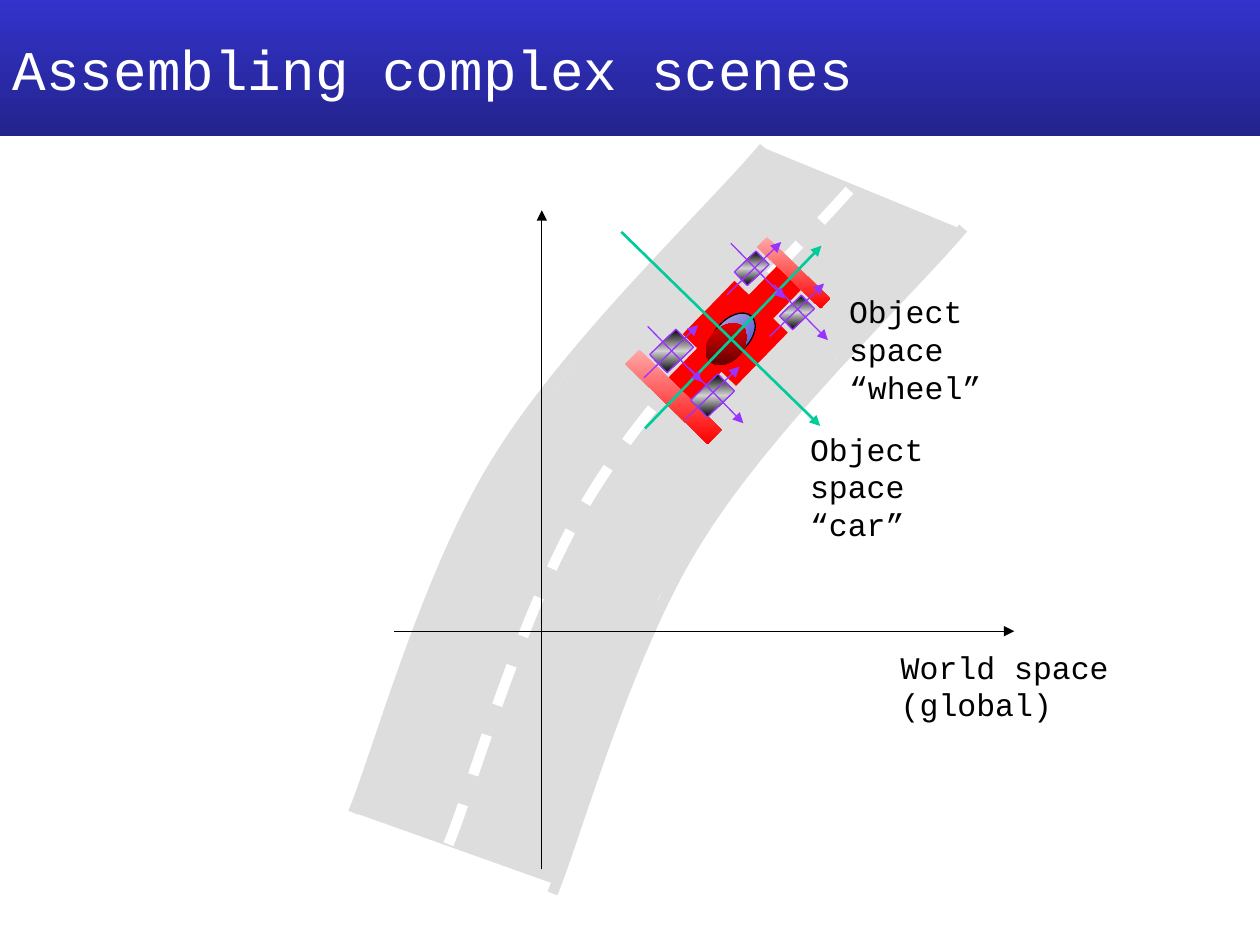
from lxml import etree
from pptx import Presentation
from pptx import util as u
from pptx.dml.color import RGBColor
from pptx.enum import dml, shapes, text
from pptx.oxml import ns

Pt = u.Pt
FONT = "Courier New"
CAR_ANGLE = 224.2
WHEEL_ANGLE = 46
COLORS = {
    "white": "FFFFFF", "black": "000000", "road": "DDDDDD",
    "bar_top": "3333CC", "bar_bottom": "23238C",
    "red": "FF0000", "pink": "FFA9A9", "maroon": "4D0000",
    "glass": "CACAEB", "blue": "3333CC", "shine": "D1D1D1",
    "car_axis": "00CC99", "wheel_axis": "9933FF",
}
ROAD = [(315.4, 504.7), (376.6, 341.3), (417.6, 276.5), (477.4, 204.5),
        (551.5, 131.8), (435.6, 84.2), (345.6, 186.5), (283, 264.2),
        (244.8, 342.7), (215.3, 426.2), (202.3, 464.4)]
CENTER_LINE = [(256.3, 482.4), (270, 449.3), (298.8, 344.9), (338.4, 281.5),
               (379.4, 214.6), (459.4, 139.7), (491, 102.2)]
WHEELS = [
    ((376.6, 190.1, 14.4, 20.9), (370.1, 186.5)),
    ((424.1, 144.7, 10.8, 17.3), (417.6, 139)),
    ((450, 169.9, 10.8, 17.3), (442.1, 162.7)),
    ((400.3, 215.3, 13.7, 21.6), (393.8, 210.2)),
]


def rgb(name):
    return RGBColor.from_string(COLORS[name])


def paint(shape, names, angle=90):
    if len(names) == 1:
        shape.fill.solid()
        shape.fill.fore_color.rgb = rgb(names[0])
        return
    shape.fill.gradient()
    shape.fill.gradient_angle = 360 - angle
    gradient = shape._element.spPr.find(ns.qn("a:gradFill"))
    gradient.set("rotWithShape", "0")
    stops = gradient.find(ns.qn("a:gsLst"))
    for stop in list(stops):
        stops.remove(stop)
    for index, name in enumerate(names):
        stop = etree.SubElement(stops, ns.qn("a:gs"))
        stop.set("pos", str(100000 * index // (len(names) - 1)))
        etree.SubElement(stop, ns.qn("a:srgbClr")).set("val", COLORS[name])


def outline(shape, color=None, width=0.75):
    if color is None:
        shape.line.fill.background()
        return
    shape.line.color.rgb = rgb(color)
    shape.line.width = Pt(width)


def add_part(parent, kind, bounds, angle, names, line=None, slant=90):
    part = parent.shapes.add_shape(kind, *map(Pt, bounds))
    part.shadow.inherit = False
    part.rotation = angle
    paint(part, names, slant)
    outline(part, line)


def add_arrow(parent, start, end, color, width=0.75):
    arrow = parent.shapes.add_connector(
        shapes.MSO_CONNECTOR.STRAIGHT, *map(Pt, (*start, *end)))
    outline(arrow, color, width)
    tip = etree.SubElement(arrow.line._get_or_add_ln(), ns.qn("a:tailEnd"))
    tip.set("type", "triangle")
    etree.SubElement(arrow._element.spPr, ns.qn("a:effectLst"))


def add_outline(page, points, close):
    points = [(Pt(x), Pt(y)) for x, y in points]
    builder = page.shapes.build_freeform(*points[0])
    builder.add_line_segments(points[1:], close=close)
    shape = builder.convert_to_shape()
    shape.shadow.inherit = False
    return shape


def bend(shape):
    track = next(shape._element.iter(ns.qn("a:path")))
    lines = track.findall(ns.qn("a:lnTo"))
    for first in range(0, len(lines), 3):
        curve = etree.SubElement(track, ns.qn("a:cubicBezTo"))
        for line in lines[first:first + 3]:
            curve.append(line[0])
            track.remove(line)


def add_stripe(page, color, dx=0, dy=0, dash=None):
    points = [(x + dx, y + dy) for x, y in CENTER_LINE]
    stripe = add_outline(page, points, False)
    bend(stripe)
    stripe.fill.background()
    outline(stripe, color, 6)
    stripe.line.dash_style = dash


def write(para, content, size=18, color="black"):
    para.alignment = text.PP_ALIGN.LEFT
    span = para.add_run()
    span.text = content
    span.font.name = FONT
    span.font.size = Pt(size)
    span.font.color.rgb = rgb(color)


def add_label(page, bounds, lines):
    box = page.shapes.add_textbox(*map(Pt, bounds))
    frame = box.text_frame
    frame.word_wrap = True
    frame.auto_size = text.MSO_AUTO_SIZE.SHAPE_TO_FIT_TEXT
    for index, line in enumerate(lines):
        para = frame.add_paragraph() if index else frame.paragraphs[0]
        write(para, line)


def add_title(page, content):
    title = page.shapes.title
    title.left, title.top, title.width, title.height = map(
        Pt, (0, 0, 720, 77.8))
    paint(title, ["bar_top", "bar_bottom"])
    title.text_frame.vertical_anchor = text.MSO_ANCHOR.MIDDLE
    write(title.text_frame.paragraphs[0], content, size=32, color="white")


def add_road(page):
    road = add_outline(page, ROAD, True)
    paint(road, ["road"])
    outline(road)
    add_stripe(page, "white", dash=dml.MSO_LINE.DASH)
    add_stripe(page, "road", -54.4, -18)
    add_stripe(page, "road", 59.4, 28.1)


def add_car(page):
    car = page.shapes.add_group_shape()
    rect, oval = shapes.MSO_SHAPE.RECTANGLE, shapes.MSO_SHAPE.OVAL
    add_part(car, rect, (398.9, 169.2, 42.5, 42.5), CAR_ANGLE, ["red"])
    add_part(car, rect, (410.4, 138.2, 19.4, 104.4), CAR_ANGLE, ["red"])
    add_part(car, rect, (428.4, 151.9, 50.4, 7.9), CAR_ANGLE, ["pink", "red"])
    add_part(car, oval, (409, 176.4, 19.4, 31), CAR_ANGLE,
             ["glass", "blue"], line="black", slant=45)
    add_part(car, oval, (405.4, 182.9, 19.4, 27.4), CAR_ANGLE,
             ["red", "maroon"])
    add_part(car, rect, (352.1, 221, 65.5, 11.5), CAR_ANGLE, ["pink", "red"])


def add_wheel(page, bounds, origin):
    wheel = page.shapes.add_group_shape()
    x, y = origin
    add_part(wheel, shapes.MSO_SHAPE.RECTANGLE, bounds, WHEEL_ANGLE,
             ["black", "shine", "black"], line="wheel_axis")
    add_arrow(wheel, (x, y), (x + 31, y + 31.7), "wheel_axis")
    add_arrow(wheel, (x - 2.2, y + 29.5), (x + 28.8, y - 0.7), "wheel_axis")


def main():
    deck = Presentation()
    deck.slide_width, deck.slide_height = Pt(720), Pt(540)
    page = deck.slides.add_slide(deck.slide_layouts[5])
    add_title(page, "Assembling complex scenes")
    add_road(page)
    add_car(page)
    add_arrow(page, (355, 132.5), (468.7, 243.4), "car_axis", 1.5)
    add_arrow(page, (368.6, 244.8), (469.4, 140.4), "car_axis", 1.5)
    add_arrow(page, (225.4, 360.7), (579.6, 360.7), "black")
    add_arrow(page, (309.6, 496.8), (309.6, 120.2), "black")
    add_label(page, (507.6, 366.5, 180.7, 29.5), ["World space (global)"])
    for bounds, origin in WHEELS:
        add_wheel(page, bounds, origin)
    add_label(page, (478.1, 163.4, 120.2, 51.1), ["Object space", "“wheel”"])
    add_label(page, (455.8, 241.9, 120.2, 51.1), ["Object space", "“car”"])
    deck.save("out.pptx")


if __name__ == "__main__":
    main()
